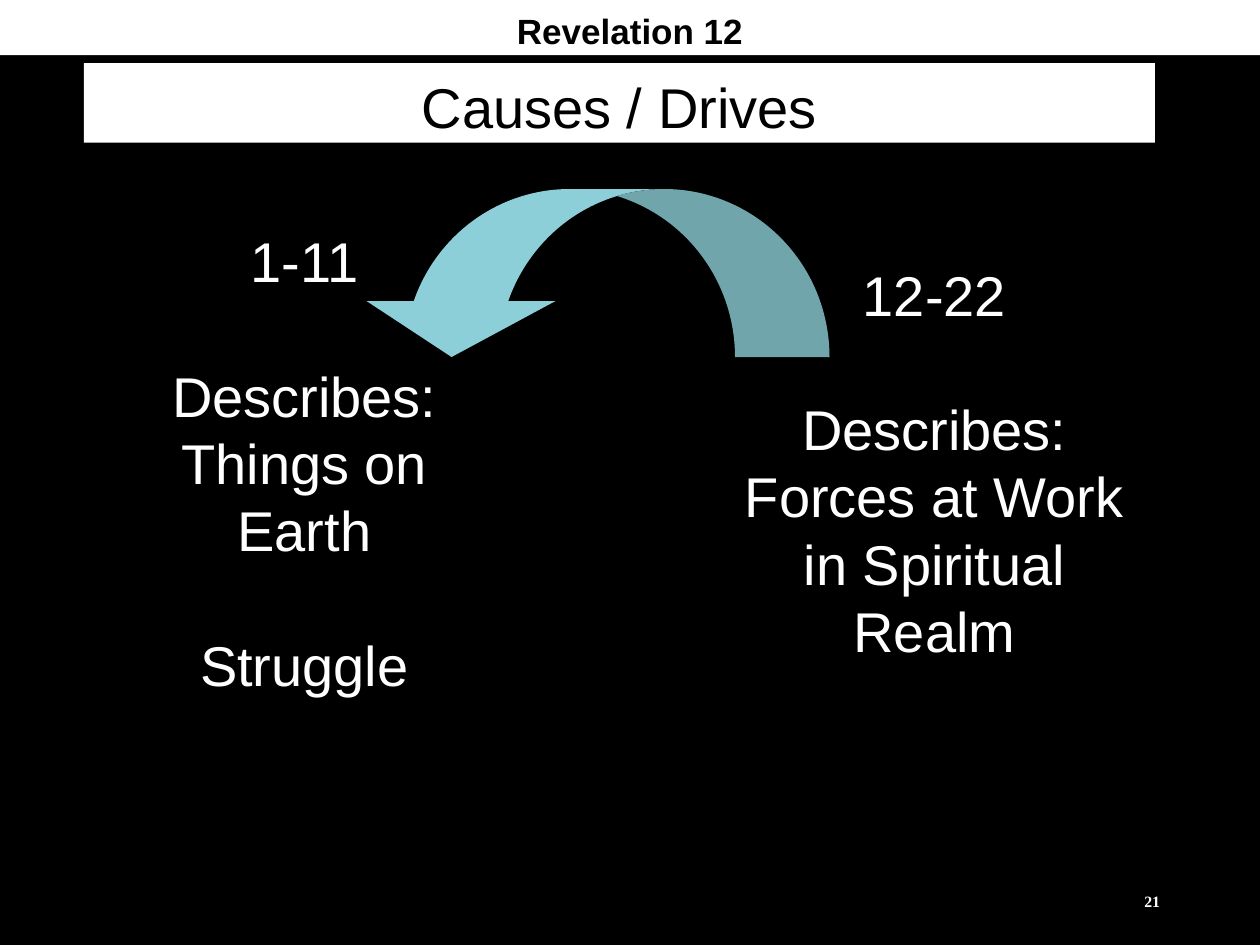
from pptx import Presentation
from pptx.dml.color import RGBColor
from pptx.enum.shapes import MSO_SHAPE
from pptx.enum.text import MSO_ANCHOR, PP_ALIGN
from pptx.util import Pt

BLACK = RGBColor(0x00, 0x00, 0x00)
WHITE = RGBColor(0xFF, 0xFF, 0xFF)
AQUA = RGBColor(0x8D, 0xCF, 0xD8)
LINE_RATIO = 1.2


def place(sp, x, y, w, h):
    sp.left, sp.top, sp.width, sp.height = Pt(x), Pt(y), Pt(w), Pt(h)


def fill_shape(sp, color):
    sp.fill.solid()
    sp.fill.fore_color.rgb = color
    sp.line.fill.background()


def write(sp, lines, size, color, font="Arial", bold=False, align=PP_ALIGN.CENTER, wrap=True):
    tf = sp.text_frame
    tf.text = "\n".join(lines)
    tf.word_wrap = wrap
    tf.vertical_anchor = MSO_ANCHOR.MIDDLE
    for p in tf.paragraphs:
        p.alignment = align
        p.line_spacing = Pt(size * LINE_RATIO)
        p.space_before = Pt(0)
        for r in p.runs:
            r.font.name = font
            r.font.size = Pt(size)
            r.font.bold = bold
            r.font.color.rgb = color
    return tf


def add_block(s, kind, x, y, w, h, color):
    sp = s.shapes.add_shape(kind, Pt(x), Pt(y), Pt(w), Pt(h))
    sp.shadow.inherit = False
    fill_shape(sp, color)
    return sp


def add_panel(s, x, lines, gaps):
    sp = add_block(s, MSO_SHAPE.RECTANGLE, x, 120, 252, 288, BLACK)
    tf = write(sp, lines, 32, WHITE, wrap=False)
    for i in gaps:
        tf.paragraphs[i].space_before = Pt(32 * LINE_RATIO)


def add_arrow(s):
    sp = add_block(s, MSO_SHAPE.CURVED_RIGHT_ARROW, 291, 21, 96, 270, AQUA)
    sp.rotation = 90
    for i, value in enumerate((0.5625, 1.125, 1 / 3)):
        sp.adjustments[i] = value


def add_banner(s, text):
    sp = add_block(s, MSO_SHAPE.RECTANGLE, 48, 36, 612, 45.5, WHITE)
    write(sp, [text], 32, BLACK).margin_bottom = Pt(0)


def add_title(s, text):
    sp = s.shapes.title
    place(sp, 0, 0, 720, 31.5)
    fill_shape(sp, WHITE)
    write(sp, [text], 20, BLACK, bold=True).margin_bottom = Pt(0)


def add_page_number(s, text):
    sp = s.shapes.add_textbox(Pt(508), Pt(500.5), Pt(162), Pt(28.5))
    write(sp, [text], 9, WHITE, "Times New Roman", True, PP_ALIGN.RIGHT)


def main():
    prs = Presentation()
    prs.slide_width, prs.slide_height = Pt(720), Pt(540)
    s = prs.slides.add_slide(prs.slide_layouts[5])
    s.background.fill.solid()
    s.background.fill.fore_color.rgb = BLACK

    add_title(s, "Revelation 12")
    add_panel(s, 48, ["1-11", "Describes:", "Things on", "Earth", "Struggle"], (1, 4))
    add_panel(s, 408, ["12-22", "Describes:", "Forces at Work", "in Spiritual", "Realm"], (1,))
    add_arrow(s)
    add_banner(s, "Causes / Drives")
    add_page_number(s, "21")
    prs.save("out.pptx")


if __name__ == "__main__":
    main()
